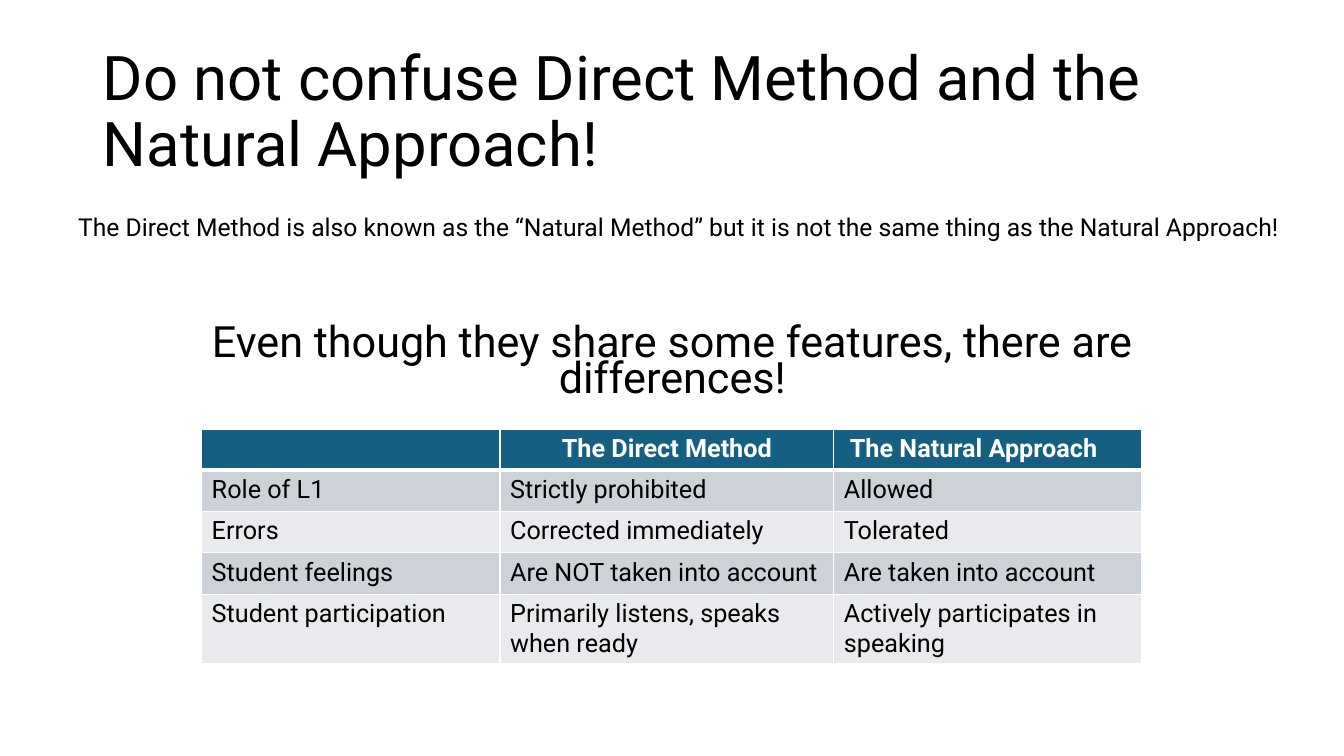
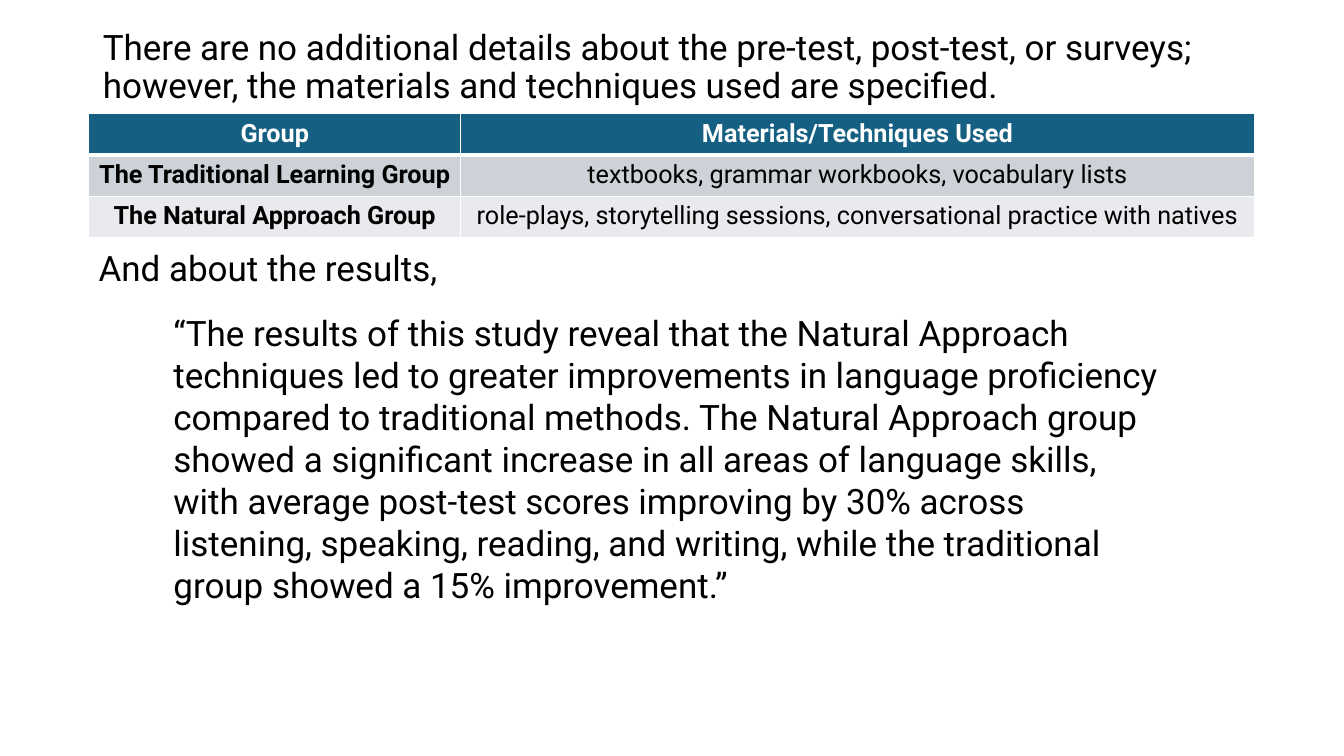
from lxml import etree
from pptx import Presentation
from pptx.dml.color import RGBColor
from pptx.enum.text import MSO_ANCHOR, MSO_AUTO_SIZE, PP_ALIGN
from pptx.oxml.ns import qn
from pptx.util import Inches, Pt

LEFT, CENTER = PP_ALIGN.LEFT, PP_ALIGN.CENTER
TOP, MIDDLE = MSO_ANCHOR.TOP, MSO_ANCHOR.MIDDLE
NO_FIT = MSO_AUTO_SIZE.NONE

COLORS = {
    "text": "000000",
    "white": "FFFFFF",
    "header": "156082",
    "odd_row": "CCD2D8",
    "even_row": "E8EAED",
}
FONT = "Roboto"
TABLE_SIZE = 18
READING_SIZE = 25
ROW_HEIGHT = 0.41


def color(name):
    return RGBColor.from_string(COLORS[name])


class SlideBuilder:
    def __init__(self):
        self.deck = Presentation()
        self.deck.slide_width = Inches(13.33)
        self.deck.slide_height = Inches(7.5)
        self.slide = None

    def new_slide(self):
        self.slide = self.deck.slides.add_slide(self.deck.slide_layouts[1])

    def add_span(self, para, text, size, color_name="text", bold=False):
        span = para.add_run()
        span.text = text
        span.font.name = FONT
        span.font.size = Pt(size)
        span.font.bold = bold
        span.font.color.rgb = color(color_name)

    def set_text(self, shape, area, text, size, align=LEFT, anchor=TOP, spacing=1.0):
        """Place a text shape and fill it with one plain paragraph."""
        shape.left, shape.top, shape.width, shape.height = map(Inches, area)
        frame = shape.text_frame
        frame.word_wrap = True
        frame.auto_size = NO_FIT
        frame.vertical_anchor = anchor
        para = frame.paragraphs[0]
        para.alignment = align
        para.line_spacing = spacing
        para.space_before = Pt(0)
        self.add_span(para, text, size)
        return para

    def title(self, area, text, size, **style):
        self.set_text(self.slide.shapes.title, area, text, size, spacing=0.9, **style)

    def body(self, area, text, size, **style):
        para = self.set_text(self.slide.placeholders[1], area, text, size, **style)
        properties = para._p.get_or_add_pPr()
        properties.set("marL", "0")
        properties.set("indent", "0")
        etree.SubElement(properties, qn("a:buNone"))

    def text(self, area, text, size, **style):
        box = self.slide.shapes.add_textbox(*map(Inches, area))
        self.set_text(box, area, text, size, **style)

    def borders(self, cell, top, bottom):
        """Draw white cell edges; top and bottom widths are in points."""
        properties = cell._tc.get_or_add_tcPr()
        for edge, width in (("lnL", 1), ("lnR", 1), ("lnT", top), ("lnB", bottom)):
            line = etree.SubElement(properties, qn(f"a:{edge}"), w=str(Pt(width)))
            fill = etree.SubElement(line, qn("a:solidFill"))
            etree.SubElement(fill, qn("a:srgbClr"), val=COLORS["white"])

    def table(self, left, top, widths, heights, rows, align=LEFT, bold_labels=False):
        frame = self.slide.shapes.add_table(
            len(rows), len(widths), Inches(left), Inches(top),
            Inches(sum(widths)), Inches(sum(heights)))
        table = frame.table
        for column, width in zip(table.columns, widths):
            column.width = Inches(width)
        for row_index, (texts, height) in enumerate(zip(rows, heights)):
            table.rows[row_index].height = Inches(height)
            is_header = row_index == 0
            band = "header" if is_header else ("even_row", "odd_row")[row_index % 2]
            for column_index, text in enumerate(texts):
                cell = table.cell(row_index, column_index)
                self.borders(cell, 3 if row_index == 1 else 1, 3 if is_header else 1)
                cell.fill.solid()
                cell.fill.fore_color.rgb = color(band)
                para = cell.text_frame.paragraphs[0]
                para.alignment = align
                para.font.size = Pt(TABLE_SIZE)
                if text:
                    self.add_span(para, text, TABLE_SIZE,
                                  "white" if is_header else "text",
                                  is_header or (bold_labels and column_index == 0))
        return table


def build_comparison(builder):
    builder.new_slide()
    builder.title((0.92, 0.4, 11.5, 1.45),
                  "Do not confuse Direct Method and the Natural Approach!",
                  44, anchor=MIDDLE)
    builder.body((0.92, 3.32, 11.5, 0.6),
                 "Even though they share some features, there are differences!",
                 30.8, align=CENTER, anchor=MIDDLE, spacing=0.7)
    table = builder.table(2, 4.26, (2.96, 3.31, 3.05), [0.39] + [ROW_HEIGHT] * 4, (
        ("", "The Direct Method", "The Natural Approach"),
        ("Role of L1", "Strictly prohibited", "Allowed"),
        ("Errors", "Corrected immediately", "Tolerated"),
        ("Student feelings", "Are NOT taken into account", "Are taken into account"),
        ("Student participation", "Primarily listens, speaks when ready",
         "Actively participates in speaking"),
    ))
    table.cell(0, 1).text_frame.paragraphs[0].alignment = CENTER
    table.cell(0, 2).margin_left = Inches(0.16)
    builder.text((0.49, 1.99, 12.49, 0.6),
                 "The Direct Method is also known as the “Natural Method” but it is "
                 "not the same thing as the Natural Approach!",
                 17.6, align=CENTER, anchor=MIDDLE, spacing=0.7)


def build_results(builder):
    builder.new_slide()
    builder.title((0.92, 0.25, 11.5, 0.87),
                  "There are no additional details about the pre-test, post-test, or "
                  "surveys; however, the materials and techniques used are specified.",
                  READING_SIZE)
    builder.table(0.88, 1.13, (3.69, 7.87), [ROW_HEIGHT] * 3, (
        ("Group", "Materials/Techniques Used"),
        ("The Traditional Learning Group",
         "textbooks, grammar workbooks, vocabulary lists"),
        ("The Natural Approach Group",
         "role-plays, storytelling sessions, conversational practice with natives"),
    ), align=CENTER, bold_labels=True)
    builder.text((0.88, 2.44, 3.72, 0.5), "And about the results,",
                 READING_SIZE, spacing=0.9)
    builder.body((1.62, 3.04, 10.08, 3.05),
                 "“The results of this study reveal that the Natural Approach "
                 "techniques led to greater improvements in language proficiency "
                 "compared to traditional methods. The Natural Approach group showed "
                 "a significant increase in all areas of language skills, with average "
                 "post-test scores improving by 30% across listening, speaking, "
                 "reading, and writing, while the traditional group showed a 15% "
                 "improvement.”",
                 READING_SIZE)


def main():
    builder = SlideBuilder()
    build_comparison(builder)
    build_results(builder)
    builder.deck.save("out.pptx")


if __name__ == "__main__":
    main()
